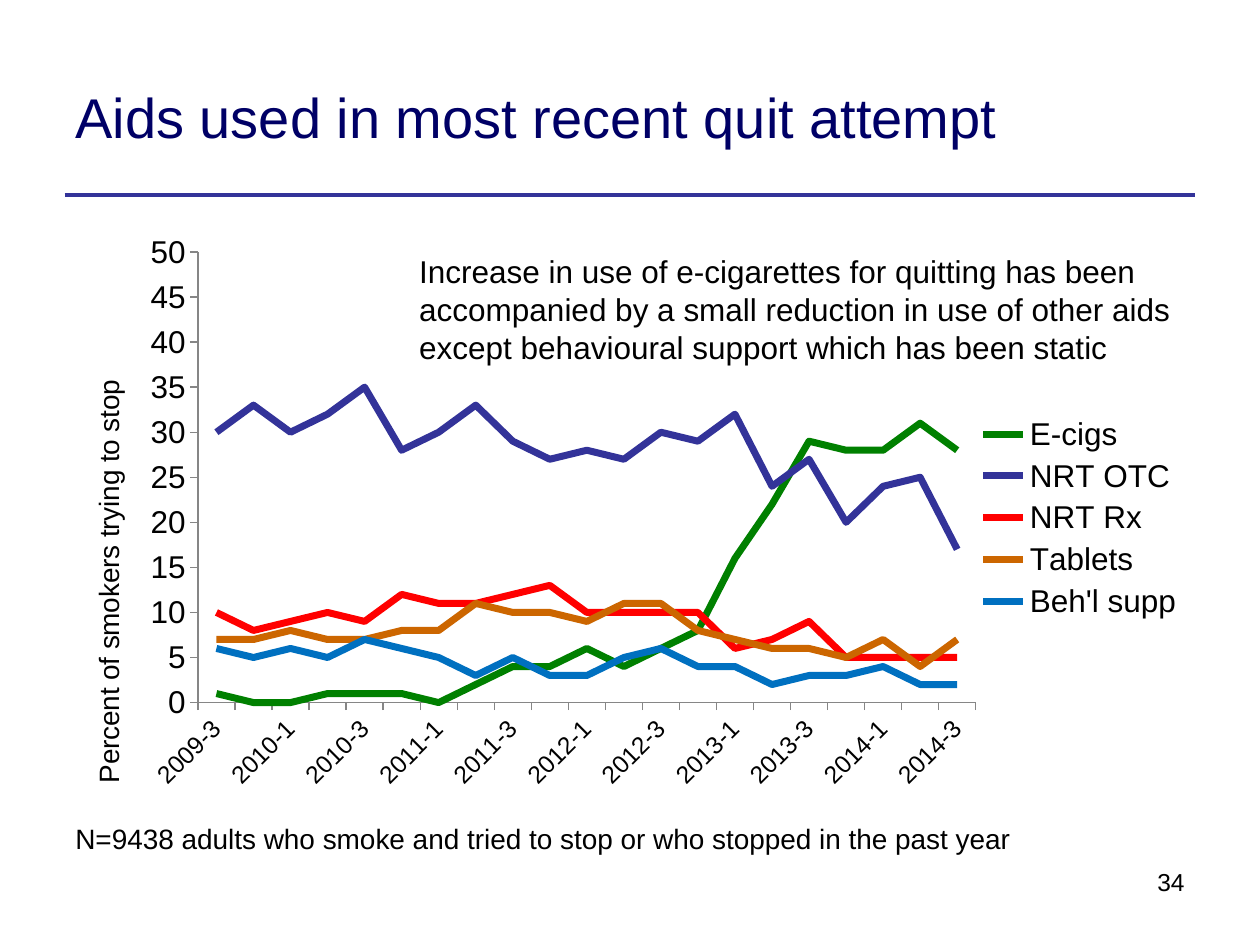
from lxml import etree
from pptx import Presentation
from pptx.chart.data import CategoryChartData
from pptx.dml.color import RGBColor
from pptx.enum.chart import XL_CHART_TYPE as ChartType, XL_LEGEND_POSITION as LegendPosition
from pptx.enum.chart import XL_MARKER_STYLE as MarkerStyle, XL_TICK_MARK as TickMark
from pptx.enum.shapes import MSO_CONNECTOR as Connector
from pptx.enum.text import MSO_ANCHOR as Anchor, PP_ALIGN as Align
from pptx.oxml import parse_xml
from pptx.oxml.ns import nsdecls, qn
from pptx.util import Pt

FONT = "Arial"
BLACK = RGBColor(0x00, 0x00, 0x00)
NAVY = RGBColor(0x00, 0x00, 0x66)
INDIGO = RGBColor(0x33, 0x33, 0x99)
GREEN = RGBColor(0x00, 0x80, 0x00)
RED = RGBColor(0xFF, 0x00, 0x00)
ORANGE = RGBColor(0xCC, 0x66, 0x00)
BLUE = RGBColor(0x00, 0x70, 0xC0)
GREY = RGBColor(0x86, 0x86, 0x86)

QUARTERS = [f"{2009 + index // 4}-{index % 4 + 1}" for index in range(2, 23)]
AIDS = [
    ("E-cigs", GREEN, [1, 0, 0, 1, 1, 1, 0, 2, 4, 4, 6, 4, 6, 8, 16, 22, 29, 28, 28, 31, 28]),
    ("NRT OTC", INDIGO,
     [30, 33, 30, 32, 35, 28, 30, 33, 29, 27, 28, 27, 30, 29, 32, 24, 27, 20, 24, 25, 17]),
    ("NRT Rx", RED, [10, 8, 9, 10, 9, 12, 11, 11, 12, 13, 10, 10, 10, 10, 6, 7, 9, 5, 5, 5, 5]),
    ("Tablets", ORANGE, [7, 7, 8, 7, 7, 8, 8, 11, 10, 10, 9, 11, 11, 8, 7, 6, 6, 5, 7, 4, 7]),
    ("Beh'l supp", BLUE, [6, 5, 6, 5, 7, 6, 5, 3, 5, 3, 3, 5, 6, 4, 4, 2, 3, 3, 4, 2, 2]),
]


def set_font(font, size, color=BLACK):
    """Give a font the deck typeface, a size and a colour."""
    font.name = FONT
    font.size = Pt(size)
    font.bold = False
    font.color.rgb = color


def add_text(page, box, text, size, color=BLACK, align=Align.LEFT, anchor=Anchor.TOP, wrap=True):
    """Place one paragraph of text in a box given in points."""
    frame = page.shapes.add_textbox(*map(Pt, box)).text_frame
    frame.word_wrap = wrap
    frame.vertical_anchor = anchor
    para = frame.paragraphs[0]
    para.alignment = align
    span = para.add_run()
    span.text = text
    set_font(span.font, size, color)


def add_header(page, box):
    """Place the title and the rule that closes the header box."""
    left, top, width, height = box
    add_text(page, (left, top, 568, height), "Aids used in most recent quit attempt", 32,
             NAVY, anchor=Anchor.MIDDLE)
    bottom = Pt(top + height)
    rule = page.shapes.add_connector(Connector.STRAIGHT, Pt(left + 1), bottom,
                                     Pt(left + width - 1), bottom)
    rule.line.color.rgb = INDIGO
    rule.line.width = Pt(2.25)
    etree.SubElement(rule.element.spPr, qn("a:effectLst"))


def make_layout(x, y, width=None, height=None):
    """Return a manual chart layout in fractions of the chart area."""
    parts = [("xMode", "edge"), ("yMode", "edge"), ("x", x), ("y", y)]
    if width is not None:
        parts = [("layoutTarget", "inner"), *parts, ("w", width), ("h", height)]
    inner = "".join(f'<c:{name} val="{value}"/>' for name, value in parts)
    return parse_xml(f'<c:layout {nsdecls("c")}><c:manualLayout>{inner}</c:manualLayout></c:layout>')


def replace_layout(parent, layout, index):
    """Swap any layout of a chart part for the given one."""
    for old in parent.findall(qn("c:layout")):
        parent.remove(old)
    parent.insert(index, layout)


def style_axes(chart):
    """Format both axes, their labels and the value axis title."""
    for axis, size in ((chart.category_axis, 14), (chart.value_axis, 18)):
        axis.has_major_gridlines = False
        axis.major_tick_mark = TickMark.OUTSIDE
        axis.minor_tick_mark = TickMark.NONE
        axis.format.line.color.rgb = GREY
        set_font(axis.tick_labels.font, size)

    quarters = chart.category_axis._element
    quarters.find(qn("c:txPr")).find(qn("a:bodyPr")).set("rot", "-2700000")
    skip = parse_xml(f'<c:tickLblSkip {nsdecls("c")} val="2"/>')
    quarters.find(qn("c:noMultiLvlLbl")).addprevious(skip)

    percent = chart.value_axis
    percent.minimum_scale, percent.maximum_scale, percent.major_unit = 0, 50, 5
    frame = percent.axis_title.text_frame
    frame.text = "Percent of smokers trying to stop"
    set_font(frame.paragraphs[0].runs[0].font, 16)
    title = percent.axis_title._element
    title.find(qn("c:tx")).find(qn("c:rich")).find(qn("a:bodyPr")).set("rot", "-5400000")
    replace_layout(title, make_layout(0.02, 0.26), 1)


def add_aids_chart(page, box):
    """Place the line chart of quitting aids by quarter."""
    data = CategoryChartData()
    data.categories = QUARTERS
    for name, _, values in AIDS:
        data.add_series(name, values)
    chart = page.shapes.add_chart(ChartType.LINE, *map(Pt, box), data).chart
    set_font(chart.font, 18)
    chart.has_title = False
    chart.has_legend = True
    chart.legend.position = LegendPosition.RIGHT
    chart.legend.include_in_layout = False
    set_font(chart.legend.font, 18)
    plot = chart.plots[0]
    plot.vary_by_categories = False
    for series, (_, color, _) in zip(plot.series, AIDS):
        series.smooth = False
        series.marker.style = MarkerStyle.NONE
        series.format.line.color.rgb = color
        series.format.line.width = Pt(4)
    style_axes(chart)
    plot_area = chart.element.chart.plotArea
    replace_layout(plot_area, make_layout(0.119, 0.053, 0.686, 0.758), 0)


def add_notes(page, box):
    """Place the finding, the sample size and the page number in the body box."""
    left, top, width, height = box
    right, bottom = left + width, top + height
    add_text(page, (right - 451.5, top + 14.4, 451.5, 72.7),
             "Increase in use of e-cigarettes for quitting has been accompanied by a small "
             "reduction in use of other aids except behavioural support which has been static", 18)
    add_text(page, (left, bottom, 556, 26.6),
             "N=9438 adults who smoke and tried to stop or who stopped in the past year",
             16, wrap=False)
    add_text(page, (right - 199.5, bottom + 26, 199.5, 37.5), "34", 14, align=Align.RIGHT)


def main():
    """Build the slide and save the deck."""
    deck = Presentation()
    deck.slide_width, deck.slide_height = Pt(720), Pt(540)
    page = deck.slides.add_slide(deck.slide_layouts[6])
    body = (36, 126, 648, 339.8)
    add_header(page, (36, 21.6, 648, 90))
    add_aids_chart(page, body)
    add_notes(page, body)
    deck.save("out.pptx")


if __name__ == "__main__":
    main()
